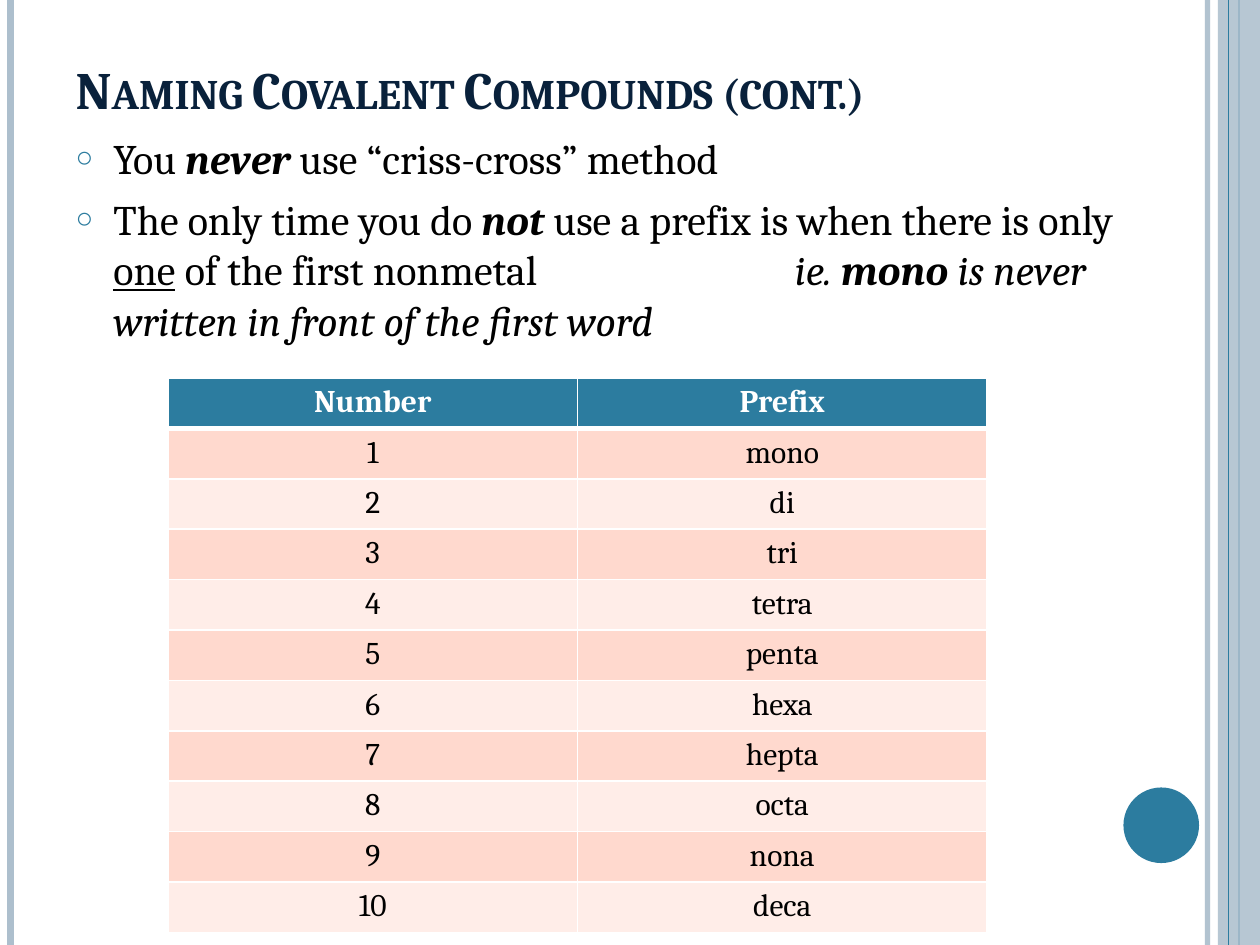
"""Builds the slide on naming covalent compounds with its table of prefixes."""
from dataclasses import dataclass

from lxml import etree
from pptx import Presentation
from pptx.dml.color import RGBColor
from pptx.enum.shapes import MSO_CONNECTOR, MSO_SHAPE
from pptx.enum.text import MSO_ANCHOR, MSO_AUTO_SIZE, PP_ALIGN
from pptx.oxml.ns import qn
from pptx.util import Pt

STRAIGHT = MSO_CONNECTOR.STRAIGHT
RECTANGLE, OVAL = MSO_SHAPE.RECTANGLE, MSO_SHAPE.OVAL
TOP, BOTTOM = MSO_ANCHOR.TOP, MSO_ANCHOR.BOTTOM
NO_AUTOFIT = MSO_AUTO_SIZE.NONE
LEFT, CENTER = PP_ALIGN.LEFT, PP_ALIGN.CENTER

SLIDE_WIDTH, SLIDE_HEIGHT = 720, 540
PREFIXES = ["mono", "di", "tri", "tetra", "penta",
            "hexa", "hepta", "octa", "nona", "deca"]
RULES = [
    [("You ", ""), ("never", "bi"), (" use “criss-cross” method", "")],
    [("The only time you do ", ""), ("not", "bi"),
     (" use a prefix is when there is only ", ""), ("one", "u"),
     (" of the first nonmetal", ""), ("\tie. ", "i"), ("mono", "bi"),
     (" is never written in front of the first word", "i")],
]


@dataclass(frozen=True)
class Theme:
    """Colours, font and type sizes of the slide."""
    font: str = "Cambria"
    title_size: int = 30
    body_size: int = 24
    table_size: int = 18
    title: str = "09213B"
    text: str = "000000"
    paper: str = "FFFFFF"
    accent: str = "2C7C9F"
    edge: str = "ADBFCD"
    bands: tuple = ("FFD9CE", "FFEDE8")


def add_xml(parent, tag, **attributes):
    """Append a DrawingML element and return it."""
    return etree.SubElement(parent, qn(tag), attributes)


def add_alpha(element, percent):
    """Make the first colour in an element partly transparent."""
    colour = next(element.iter(qn("a:srgbClr")))
    add_xml(colour, "a:alpha", val=str(percent * 1000))


class SlideBuilder:
    """Adds styled elements to the current slide."""

    def __init__(self, slide, theme):
        self.slide = slide
        self.theme = theme

    def add_run(self, paragraph, text, size, colour, marks=""):
        """Add one run; marks holds b, i and u for its emphasis."""
        run = paragraph.add_run()
        run.text = text
        font = run.font
        font.name, font.size = self.theme.font, Pt(size)
        font.color.rgb = RGBColor.from_string(colour)
        font.bold, font.italic, font.underline = (mark in marks for mark in "biu")
        return run

    def add_rule(self, x, colour, weight, opacity=100):
        """Draw a vertical line over the full slide height."""
        rule = self.slide.shapes.add_connector(
            STRAIGHT, Pt(x), Pt(0), Pt(x), Pt(SLIDE_HEIGHT))
        rule.line.color.rgb = RGBColor.from_string(colour)
        rule.line.width = Pt(weight)
        properties = rule._element.spPr
        if opacity < 100:
            add_alpha(properties, opacity)
        add_xml(properties, "a:effectLst")

    def add_block(self, kind, box, colour, opacity=100):
        """Draw a plain filled shape."""
        block = self.slide.shapes.add_shape(kind, *map(Pt, box))
        block.shadow.inherit = False
        block.fill.solid()
        block.fill.fore_color.rgb = RGBColor.from_string(colour)
        block.line.fill.background()
        if opacity < 100:
            add_alpha(block._element.spPr, opacity)

    def place(self, placeholder, box, anchor):
        """Move a placeholder and return its text frame."""
        placeholder.left, placeholder.top, placeholder.width, placeholder.height = map(Pt, box)
        frame = placeholder.text_frame
        frame.word_wrap = True
        frame.auto_size = NO_AUTOFIT
        frame.vertical_anchor = anchor
        return frame

    def set_title(self, text, box):
        """Fill the title placeholder in small capitals."""
        heading = self.place(self.slide.shapes.title, box, BOTTOM).paragraphs[0]
        heading.alignment = LEFT
        run = self.add_run(heading, text, self.theme.title_size, self.theme.title, "b")
        run.font._element.set("cap", "small")

    def set_list(self, items, box, indent, tab):
        """Fill the body placeholder with bulleted items."""
        frame = self.place(self.slide.placeholders[1], box, TOP)
        for index, item in enumerate(items):
            entry = frame.add_paragraph() if index else frame.paragraphs[0]
            entry.space_before = Pt(6)
            properties = entry._p.get_or_add_pPr()
            properties.set("marL", str(Pt(indent)))
            properties.set("indent", str(Pt(-indent)))
            bullet_colour = add_xml(properties, "a:buClr")
            add_xml(bullet_colour, "a:srgbClr", val=self.theme.accent)
            add_xml(properties, "a:buSzPct", val="70000")
            add_xml(properties, "a:buChar", char="○")
            stops = add_xml(properties, "a:tabLst")
            add_xml(stops, "a:tab", pos=str(Pt(tab)), algn="l")
            for text, marks in item:
                self.add_run(entry, text, self.theme.body_size, self.theme.text, marks)

    def style_cell(self, cell, text, fill, colour, marks, top, bottom):
        """Write a centred cell with white borders."""
        properties = cell._tc.get_or_add_tcPr()
        for side, weight in (("L", 1), ("R", 1), ("T", top), ("B", bottom)):
            border = add_xml(properties, f"a:ln{side}", w=str(Pt(weight)))
            add_xml(add_xml(border, "a:solidFill"), "a:srgbClr", val=self.theme.paper)
        cell.fill.solid()
        cell.fill.fore_color.rgb = RGBColor.from_string(fill)
        paragraph = cell.text_frame.paragraphs[0]
        paragraph.alignment = CENTER
        self.add_run(paragraph, text, self.theme.table_size, colour, marks)

    def add_table(self, rows, box):
        """Add a table with a header row and banded body rows."""
        theme = self.theme
        table = self.slide.shapes.add_table(
            len(rows), len(rows[0]), *map(Pt, box)).table
        for row_index, row in enumerate(rows):
            if row_index == 0:
                style = (theme.accent, theme.paper, "b", 1, 3)
            else:
                band = theme.bands[(row_index - 1) % 2]
                style = (band, theme.text, "", 3 if row_index == 1 else 1, 1)
            for column_index, text in enumerate(row):
                self.style_cell(table.cell(row_index, column_index), text, *style)


def main():
    """Build and save the slide."""
    deck = Presentation()
    deck.slide_width, deck.slide_height = Pt(SLIDE_WIDTH), Pt(SLIDE_HEIGHT)
    theme = Theme()
    builder = SlideBuilder(deck.slides.add_slide(deck.slide_layouts[1]), theme)

    builder.add_rule(690, theme.edge, 3, 93)
    builder.add_rule(6, theme.edge, 4.5)
    builder.add_rule(708, theme.accent, 1.5)
    builder.add_block(RECTANGLE, (696, 0, 24, SLIDE_HEIGHT), theme.edge, 87)
    builder.add_rule(702, theme.accent, 0.75)
    builder.add_block(OVAL, (642, 450, 43.2, 43.2), theme.accent)

    builder.set_title("Naming Covalent Compounds (cont.)", (36, -24, 630, 96))
    builder.set_list(RULES, (36, 72, 624, 414), indent=21.6, tab=411)
    numbered = [(str(number), prefix) for number, prefix in enumerate(PREFIXES, 1)]
    builder.add_table([("Number", "Prefix")] + numbered, (96, 216, 468, 316.8))
    deck.save("out.pptx")


if __name__ == "__main__":
    main()
